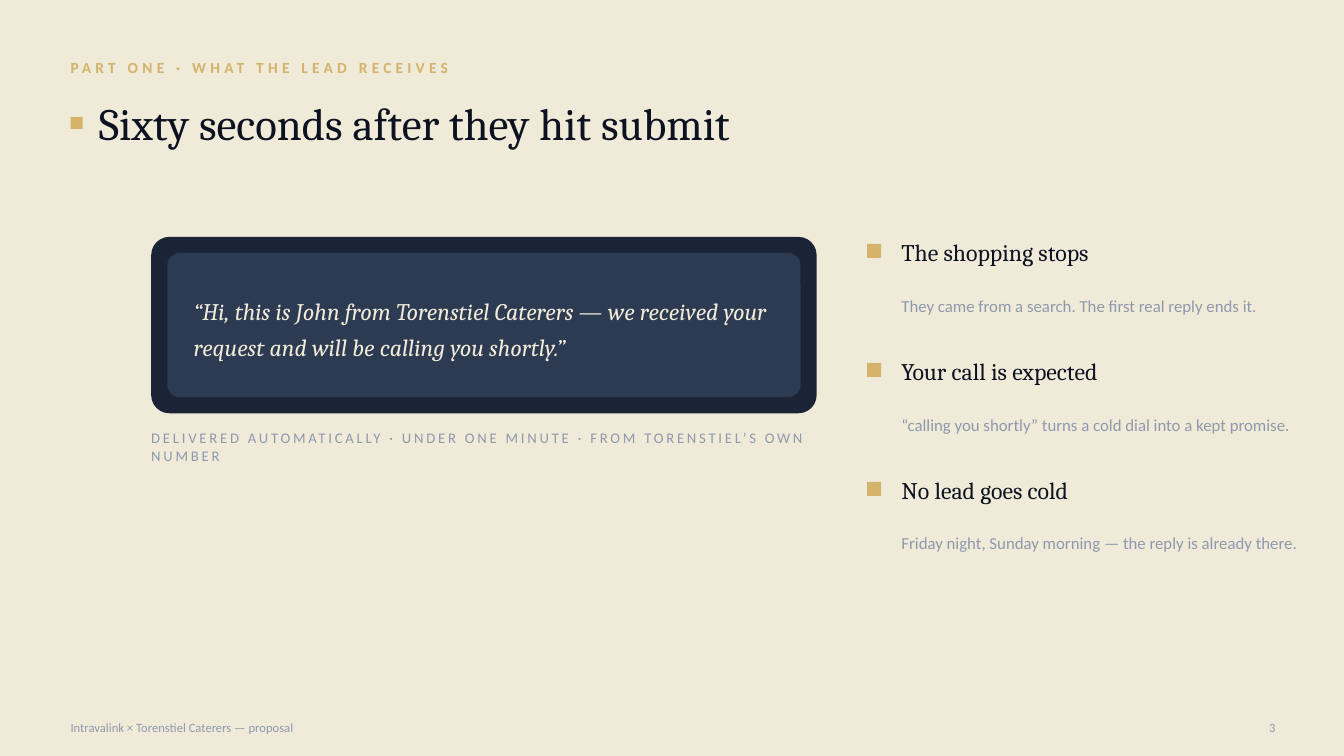
from dataclasses import dataclass, field

from pptx import Presentation
from pptx.dml.color import RGBColor
from pptx.enum.shapes import MSO_SHAPE
from pptx.enum.text import MSO_ANCHOR, PP_ALIGN
from pptx.slide import Slide
from pptx.util import Emu, Pt

EMU_PER_PX = 9144


@dataclass(frozen=True)
class TextStyle:
    name: str
    size: float
    color: str
    bold: bool = False
    italic: bool = False
    tracking: int = 0
    line_spacing: float = 1.0


@dataclass(frozen=True)
class Theme:
    paper: str = "F0EAD9"
    gold: str = "D4B36A"
    phone: str = "1B2436"
    screen: str = "2C3A52"
    eyebrow: TextStyle = TextStyle("Calibri", 11, "D4B36A", bold=True, tracking=3)
    title: TextStyle = TextStyle("Cambria", 32, "0D1220")
    message: TextStyle = TextStyle("Cambria", 17, "F0EAD9", italic=True, line_spacing=1.25)
    caption: TextStyle = TextStyle("Calibri", 10.5, "8F99AD", tracking=2)
    heading: TextStyle = TextStyle("Cambria", 17, "0D1220")
    detail: TextStyle = TextStyle("Calibri", 12, "8F99AD", line_spacing=1.1)
    footer: TextStyle = TextStyle("Calibri", 9, "8F99AD")


THEME = Theme()


@dataclass(frozen=True)
class Box:
    left: int
    top: int
    width: int
    height: int

    def emu(self) -> list[Emu]:
        return [Emu(px * EMU_PER_PX) for px in (self.left, self.top, self.width, self.height)]


@dataclass(frozen=True)
class Panel:
    box: Box
    color: str
    radius: float = 0


@dataclass(frozen=True)
class Label:
    box: Box
    text: str
    style: TextStyle
    align: PP_ALIGN = field(default=PP_ALIGN.LEFT)


@dataclass(frozen=True)
class Benefit:
    heading: str
    detail: str


PANELS = [
    Panel(Box(70, 116, 12, 12), THEME.gold),
    Panel(Box(150, 235, 660, 175), THEME.phone, 0.103),
    Panel(Box(166, 251, 628, 143), THEME.screen, 0.084),
]

LABELS = [
    Label(Box(70, 52, 1190, 30), "PART ONE · WHAT THE LEAD RECEIVES", THEME.eyebrow),
    Label(Box(98, 87, 1160, 70), "Sixty seconds after they hit submit", THEME.title),
    Label(
        Box(192, 255, 576, 135),
        "“Hi, this is John from Torenstiel Caterers — we received "
        "your request and will be calling you shortly.”",
        THEME.message,
    ),
    Label(
        Box(150, 428, 660, 30),
        "DELIVERED AUTOMATICALLY · UNDER ONE MINUTE · FROM TORENSTIEL’S OWN NUMBER",
        THEME.caption,
    ),
    Label(Box(70, 708, 650, 28), "Intravalink × Torenstiel Caterers — proposal", THEME.footer),
    Label(Box(1220, 708, 45, 28), "3", THEME.footer, PP_ALIGN.RIGHT),
]

BENEFITS = [
    Benefit("The shopping stops", "They came from a search. The first real reply ends it."),
    Benefit("Your call is expected", "“calling you shortly” turns a cold dial into a kept promise."),
    Benefit("No lead goes cold", "Friday night, Sunday morning — the reply is already there."),
]
BENEFIT_TOP = 230
BENEFIT_STEP = 118


def draw_panel(page: Slide, panel: Panel) -> None:
    kind = MSO_SHAPE.ROUNDED_RECTANGLE if panel.radius else MSO_SHAPE.RECTANGLE
    shape = page.shapes.add_shape(kind, *panel.box.emu())
    if panel.radius:
        shape.adjustments[0] = panel.radius
    shape.shadow.inherit = False
    shape.fill.solid()
    shape.fill.fore_color.rgb = RGBColor.from_string(panel.color)
    shape.line.fill.background()


def draw_label(page: Slide, label: Label) -> None:
    style = label.style
    frame = page.shapes.add_textbox(*label.box.emu()).text_frame
    frame_format = {
        "word_wrap": True,
        "vertical_anchor": MSO_ANCHOR.MIDDLE,
        **dict.fromkeys(("margin_left", "margin_top", "margin_right", "margin_bottom"), 0),
    }
    for key, value in frame_format.items():
        setattr(frame, key, value)
    para = frame.paragraphs[0]
    para.alignment = label.align
    if style.line_spacing != 1:
        para.line_spacing = style.line_spacing
    span = para.add_run()
    span.text = label.text
    font_format = {
        "name": style.name,
        "size": Pt(style.size),
        "bold": style.bold,
        "italic": style.italic,
    }
    for key, value in font_format.items():
        setattr(span.font, key, value)
    span.font.color.rgb = RGBColor.from_string(style.color)
    if style.tracking:
        span._r.get_or_add_rPr().set("spc", str(style.tracking * 100))


def draw_benefit(page: Slide, benefit: Benefit, top: int) -> None:
    draw_panel(page, Panel(Box(860, top + 12, 14, 14), THEME.gold))
    draw_label(page, Label(Box(894, top, 400, 40), benefit.heading, THEME.heading))
    draw_label(page, Label(Box(894, top + 42, 400, 60), benefit.detail, THEME.detail))


def main() -> None:
    deck = Presentation()
    deck.slide_width = Emu(1333 * EMU_PER_PX)
    deck.slide_height = Emu(750 * EMU_PER_PX)
    page = deck.slides.add_slide(deck.slide_layouts[6])
    page.background.fill.solid()
    page.background.fill.fore_color.rgb = RGBColor.from_string(THEME.paper)
    for panel in PANELS:
        draw_panel(page, panel)
    for label in LABELS:
        draw_label(page, label)
    for index, benefit in enumerate(BENEFITS):
        draw_benefit(page, benefit, BENEFIT_TOP + index * BENEFIT_STEP)
    deck.save("out.pptx")


if __name__ == "__main__":
    main()
